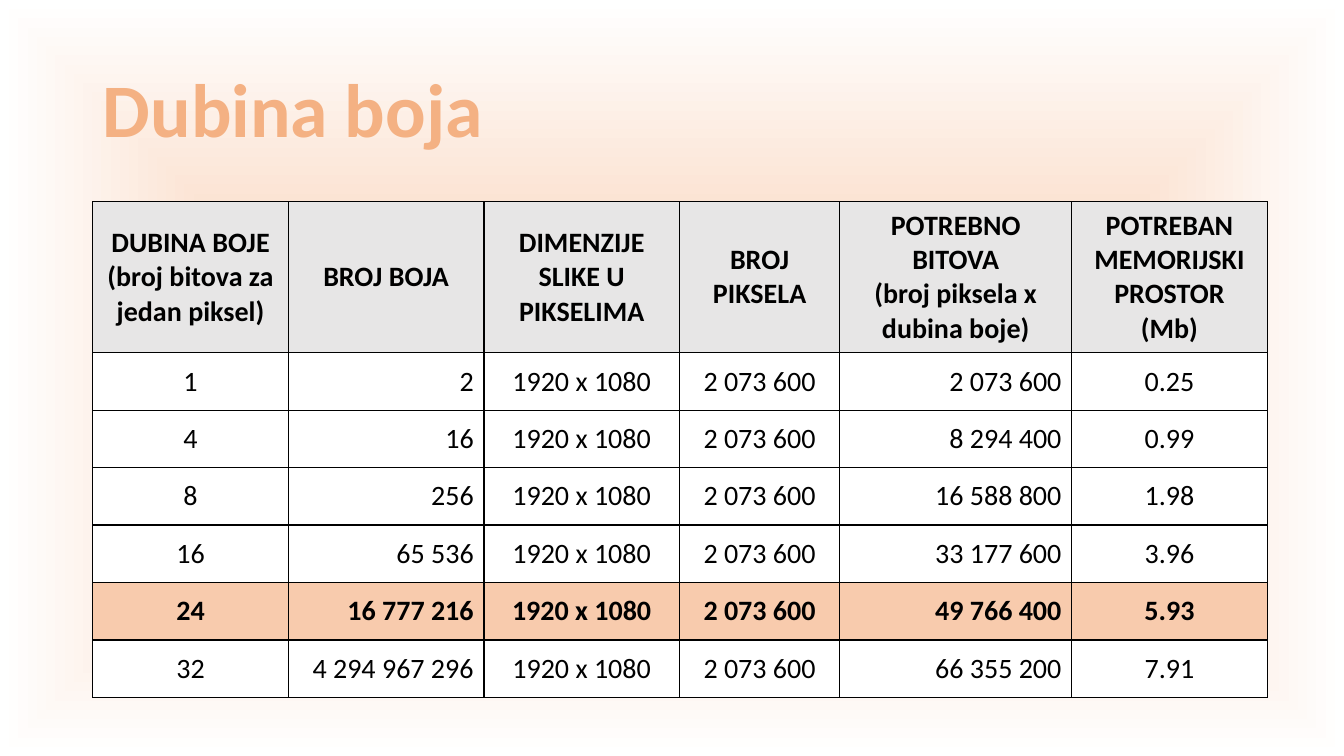
"""Build the colour depth slide with its table of memory needs."""
from dataclasses import dataclass

from lxml import etree
from pptx import Presentation
from pptx import util as u
from pptx.dml.color import RGBColor
from pptx.enum import text
from pptx.oxml.ns import qn


@dataclass(frozen=True)
class Theme:
    font: str = "Calibri"
    title_size: int = 54
    cell_size: int = 20
    title: str = "F4B183"
    ink: str = "000000"
    paper: str = "FFFFFF"
    header: str = "E7E6E6"
    accent: str = "F8CBAD"


class Deck:
    def __init__(self, theme):
        self.theme = theme
        self.prs = Presentation()
        self.prs.slide_width = u.Inches(13.33)
        self.prs.slide_height = u.Inches(7.5)
        self.s = self.prs.slides.add_slide(self.prs.slide_layouts[5])

    def background(self):
        fill = self.s.background.fill
        fill.gradient()
        for stop, color in zip(fill.gradient_stops, (self.theme.accent, self.theme.paper)):
            stop.color.rgb = RGBColor.from_string(color)
        grad = next(self.s.element.iter(qn("a:gradFill")))
        grad.remove(grad.find(qn("a:lin")))
        shade = etree.SubElement(grad, qn("a:path"), path="shape")
        etree.SubElement(shade, qn("a:fillToRect"), dict.fromkeys("ltrb", "50000"))

    def format(self, p, size, color, bold, align):
        p.alignment = align
        for r in p.runs:
            r.font.name = self.theme.font
            r.font.size = u.Pt(size)
            r.font.bold = bold
            r.font.color.rgb = RGBColor.from_string(color)

    def title(self, words, left, top, width, height):
        sp = self.s.shapes.title
        sp.left, sp.top = u.Inches(left), u.Inches(top)
        sp.width, sp.height = u.Inches(width), u.Inches(height)
        tf = sp.text_frame
        tf.text = words
        tf.word_wrap = True
        tf.vertical_anchor = text.MSO_ANCHOR.MIDDLE
        p = tf.paragraphs[0]
        p.line_spacing = 0.9
        self.format(p, self.theme.title_size, self.theme.title, True, text.PP_ALIGN.LEFT)

    def border(self, cell):
        tc_pr = cell._tc.get_or_add_tcPr()
        for i, side in enumerate("LRTB"):
            ln = etree.Element(qn(f"a:ln{side}"), w=str(u.Pt(1)))
            solid = etree.SubElement(ln, qn("a:solidFill"))
            etree.SubElement(solid, qn("a:srgbClr"), val=self.theme.ink)
            tc_pr.insert(i, ln)

    def cell(self, cell, words, fill, bold, align):
        cell.text = words
        cell.vertical_anchor = text.MSO_ANCHOR.MIDDLE
        cell.fill.solid()
        cell.fill.fore_color.rgb = RGBColor.from_string(fill)
        self.border(cell)
        for p in cell.text_frame.paragraphs:
            self.format(p, self.theme.cell_size, self.theme.ink, bold, align)

    def table(self, rows, left, top, widths, heights, right_columns, accent_row):
        frame = self.s.shapes.add_table(
            len(rows), len(widths), u.Inches(left), u.Inches(top),
            u.Inches(sum(widths)), u.Inches(sum(heights)))
        tbl = frame.table
        for column, width in zip(tbl.columns, widths):
            column.width = u.Inches(width)
        for i, (row, height) in enumerate(zip(rows, heights)):
            tbl.rows[i].height = u.Inches(height)
            fill = {0: self.theme.header, accent_row: self.theme.accent}.get(i, self.theme.paper)
            for j, words in enumerate(row):
                right = i > 0 and j in right_columns
                align = text.PP_ALIGN.RIGHT if right else text.PP_ALIGN.CENTER
                self.cell(tbl.cell(i, j), words, fill, i in (0, accent_row), align)


def grouped(number):
    return f"{number:,}".replace(",", " ")


def depth_row(depth, width=1920, height=1080):
    pixels = width * height
    bits = pixels * depth
    return (str(depth), grouped(2 ** depth), f"{width} x {height}",
            grouped(pixels), grouped(bits), f"{bits / 8 / 1024 ** 2:.2f}")


def main():
    header = ("DUBINA BOJE\n(broj bitova za jedan piksel)", "BROJ BOJA",
              "DIMENZIJE SLIKE U PIKSELIMA", "BROJ PIKSELA",
              "POTREBNO BITOVA\n(broj piksela x dubina boje)",
              "POTREBAN MEMORIJSKI PROSTOR\n(Mb)")
    depths = (1, 4, 8, 16, 24, 32)
    deck = Deck(Theme())
    deck.background()
    deck.title("Dubina boja", 0.92, 0.4, 11.5, 1.45)
    deck.table([header, *map(depth_row, depths)], 0.92, 2,
               widths=(1.94, 1.94, 1.94, 1.59, 2.3, 1.94),
               heights=[1.5] + [0.57] * len(depths),
               right_columns=(1, 4), accent_row=depths.index(24) + 1)
    deck.prs.save("out.pptx")


if __name__ == "__main__":
    main()
